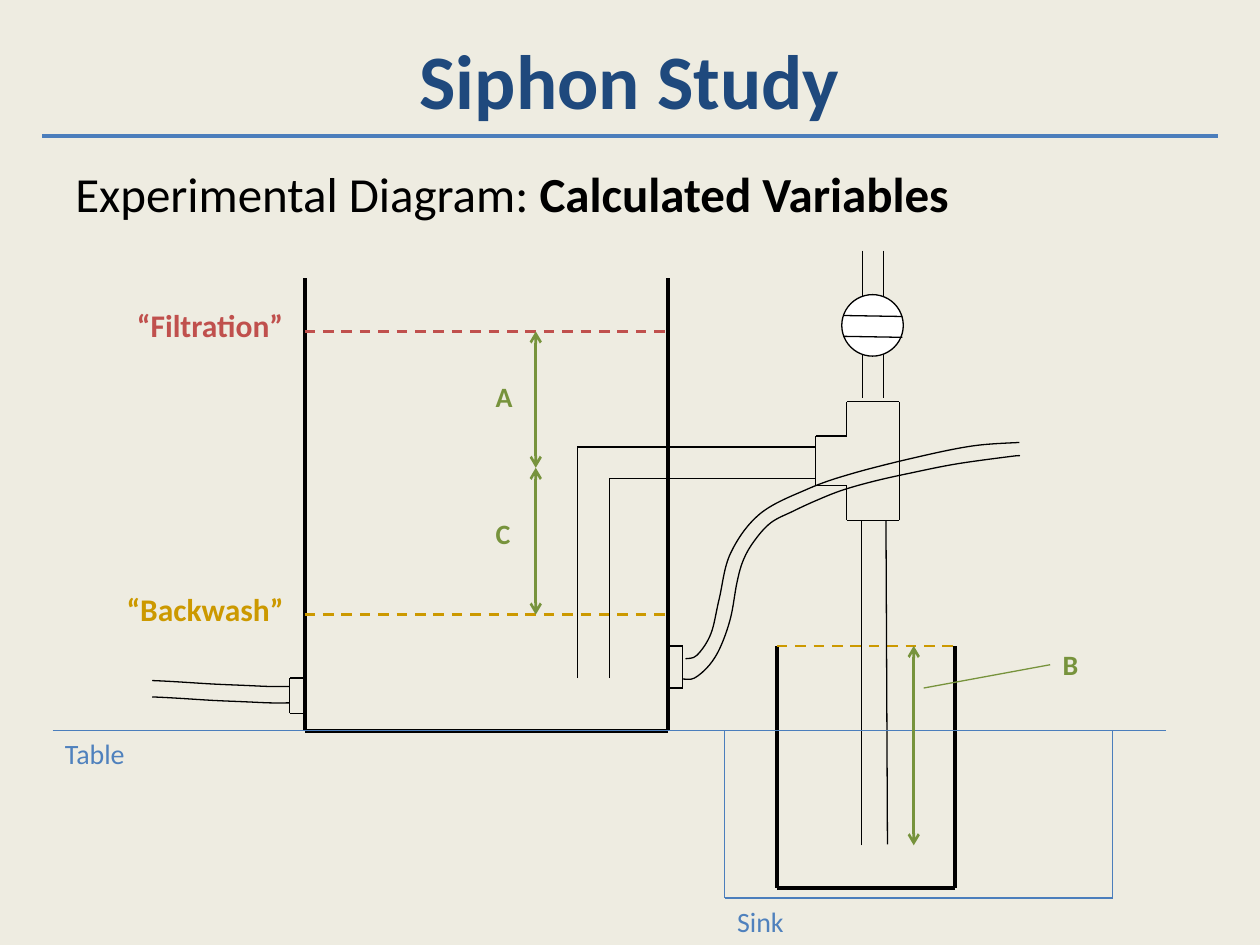
from lxml import etree
from pptx import Presentation, util as u
from pptx.dml.color import RGBColor
from pptx.enum import dml, shapes, text
from pptx.oxml.ns import qn

Cm, rgb = u.Cm, RGBColor.from_string
BLACK, RED, GOLD, GREEN = "000000", "C0504D", "CC9900", "77933C"
BLUE, RULE, NAVY = "4F81BD", "4B7EBC", "1F497D"

deck = Presentation()
deck.slide_width, deck.slide_height = Cm(25.4), Cm(19.05)
slide = deck.slides.add_slide(deck.slide_layouts[6])
slide.background.fill.solid()
slide.background.fill.fore_color.rgb = rgb("EEECE1")


def draw(points, color=BLACK, width=0.75, dash=False, arrows=False):
    """Join the points, given in cm, with straight lines."""
    for (x1, y1), (x2, y2) in zip(points, points[1:]):
        line = slide.shapes.add_connector(
            shapes.MSO_CONNECTOR.STRAIGHT, Cm(x1), Cm(y1), Cm(x2), Cm(y2))
        line.line.color.rgb = rgb(color)
        line.line.width = u.Pt(width)
        if dash:
            line.line.dash_style = dml.MSO_LINE.DASH
        if arrows:
            for end in ("a:headEnd", "a:tailEnd"):
                etree.SubElement(line.line._get_or_add_ln(), qn(end), type="arrow")
        etree.SubElement(line._element.spPr, qn("a:effectLst"))


def write(runs, x, y, w, h, size, color, center=False):
    """Add a text box; runs are pairs of wording and boldness."""
    box = slide.shapes.add_textbox(Cm(x), Cm(y), Cm(w), Cm(h))
    frame = box.text_frame
    frame.word_wrap = True
    para = frame.paragraphs[0]
    para.font.name, para.font.size = "Calibri", u.Pt(size)
    para.font.color.rgb = rgb(color)
    if center:
        para.alignment = text.PP_ALIGN.CENTER
    if len(runs) == 1:
        para.font.bold = runs[0][1]
    for words, bold in runs:
        run = para.add_run()
        run.text = words
        if len(runs) > 1:
            run.font.bold = bold
    return frame


# Heading
title = write([("Siphon Study", True)], 1.27, 0, 22.86, 3.18, 44, NAVY, True)
title.vertical_anchor = text.MSO_ANCHOR.MIDDLE
write([("Experimental Diagram: ", False), ("Calculated Variables", True)],
      1.27, 3.18, 21.17, 13, 28, BLACK)
draw([(0.85, 2.75), (24.55, 2.75)], RULE, 2.25)

# Tank and cup, with their water levels
left, right, base = 6.14, 13.46, 14.73
full, low, rim = 6.68, 12.39, 13.02
draw([(left, 5.61), (left, base), (right, base), (right, 5.61)], width=2.25)
draw([(15.66, rim), (15.66, 17.9), (19.26, 17.9), (19.26, rim)], width=2.25)
for x1, x2, y, color in ((left, right, full, RED), (left, right, low, GOLD),
                         (15.66, 19.26, rim, GOLD)):
    draw([(x1, y), (x2, y)], color, 1.5, dash=True)

# Hose fittings on the tank walls
draw([(left, 13.67), (5.84, 13.67), (5.84, 14.38), (left, 14.38)])
draw([(right, rim), (13.76, rim), (13.76, 13.87), (right, 13.87)])

# Siphon pipe, tee and down pipe
for x, y in ((11.64, 9.01), (12.28, 9.65)):
    draw([(x, 13.67), (x, y), (right, y), (16.44, y)])
draw([(17.07, 8.1), (18.13, 8.1), (18.13, 10.49), (17.07, 10.49), (17.07, 9.78),
      (16.44, 9.78), (16.44, 8.79), (17.07, 8.79), (17.07, 8.1)])
draw([(17.36, 17.04), (17.36, 10.49)])
draw([(17.89, 17.02), (17.86, 10.49)])

# Valve
for x in (17.39, 17.81):
    for y in (5.05, 6.96):
        draw([(x, y), (x, y + 1.07)])
valve = slide.shapes.add_shape(
    shapes.MSO_SHAPE.OVAL, Cm(16.97), Cm(5.94), Cm(1.24), Cm(1.24))
valve.shadow.inherit = False
valve.fill.solid()
valve.fill.fore_color.rgb = rgb("FFFFFF")
valve.line.color.rgb = rgb(BLACK)
valve.line.width = u.Pt(0.75)
for y in (6.36, 6.78):
    draw([(17, y), (18.19, y + 0.02)])

# Hoses: smooth curves through the listed points
feed = [(5.84, 13.84), (5.44, 13.84), (4.98, 13.82), (4.29, 13.79),
        (3.48, 13.74), (3.07, 13.72)]
upper = [(13.82, 13.28), (14.05, 13.21), (14.33, 12.78), (14.5, 12.07),
         (14.73, 11.15), (15.32, 10.36), (16.28, 9.86), (17.17, 9.55),
         (18.47, 9.22), (19.61, 8.99), (20.55, 8.92)]
lower = [(13.77, 13.69), (14, 13.67), (14.3, 13.41), (14.53, 13.03),
         (14.73, 12.45), (14.86, 11.73), (14.99, 11.28), (15.21, 10.9),
         (15.54, 10.54), (15.98, 10.31), (16.48, 10.08), (16.99, 9.88),
         (17.63, 9.7), (18.39, 9.53), (19.3, 9.35), (20.4, 9.2), (20.56, 9.19)]
for knots in (feed, [(x, y + 0.33) for x, y in feed], upper, lower):
    spots = [(Cm(x), Cm(y)) for x, y in knots]
    pen = slide.shapes.build_freeform(*spots[0])
    pen.add_line_segments(spots[1:], close=False)
    hose = pen.convert_to_shape()
    hose.shadow.inherit = False
    hose.fill.background()
    hose.line.color.rgb = rgb(BLACK)
    hose.line.width = u.Pt(0.75)
    # Turn each straight segment into a curve along its neighbours
    spots = [(x - hose.left, y - hose.top) for x, y in spots]
    ext = [spots[0], *spots, spots[-1]]
    parts = list(hose._element.iter(qn("a:lnTo")))
    for part, a, b, c, d in zip(parts, ext, ext[1:], ext[2:], ext[3:]):
        bend = etree.Element(qn("a:cubicBezTo"))
        first = [q + (r - p) / 6 for p, q, r in zip(a, b, c)]
        second = [r - (s - q) / 6 for q, r, s in zip(b, c, d)]
        for x, y in (first, second, c):
            etree.SubElement(bend, qn("a:pt"), x=str(round(x)), y=str(round(y)))
        part.getparent().replace(part, bend)

# Table and sink
draw([(1.06, base), (23.5, base)], RULE)
draw([(14.61, base), (14.61, 18.1), (22.43, 18.1), (22.43, base)], RULE)

# Measured heights
for x, y1, y2 in ((18.42, rim, 17.04), (10.8, full, 9.43), (10.8, 9.43, low)):
    draw([(x, y1), (x, y2)], GREEN, 1.5, arrows=True)
draw([(21.17, 13.4), (18.62, 13.87)], GREEN)

# Labels
for words, x, y, w, size, color, bold, center in (
        ("“Filtration”", 2.12, 6.05, 4.23, 18, RED, True, True),
        ("“Backwash”", 1.91, 11.76, 4.45, 18, GOLD, True, True),
        ("A", 9.74, 7.53, 1.06, 16, GREEN, True, False),
        ("B", 21.17, 12.92, 3.18, 16, GREEN, True, False),
        ("C", 9.74, 10.28, 1.06, 16, GREEN, True, False),
        ("Table", 1.06, base, 3.18, 16, BLUE, False, False),
        ("Sink", 14.61, 18.1, 3.18, 16, BLUE, False, False)):
    label = write([(words, bold)], x, y, w, 0.94, size, color, center)
    label.auto_size = text.MSO_AUTO_SIZE.SHAPE_TO_FIT_TEXT

deck.save("out.pptx")
